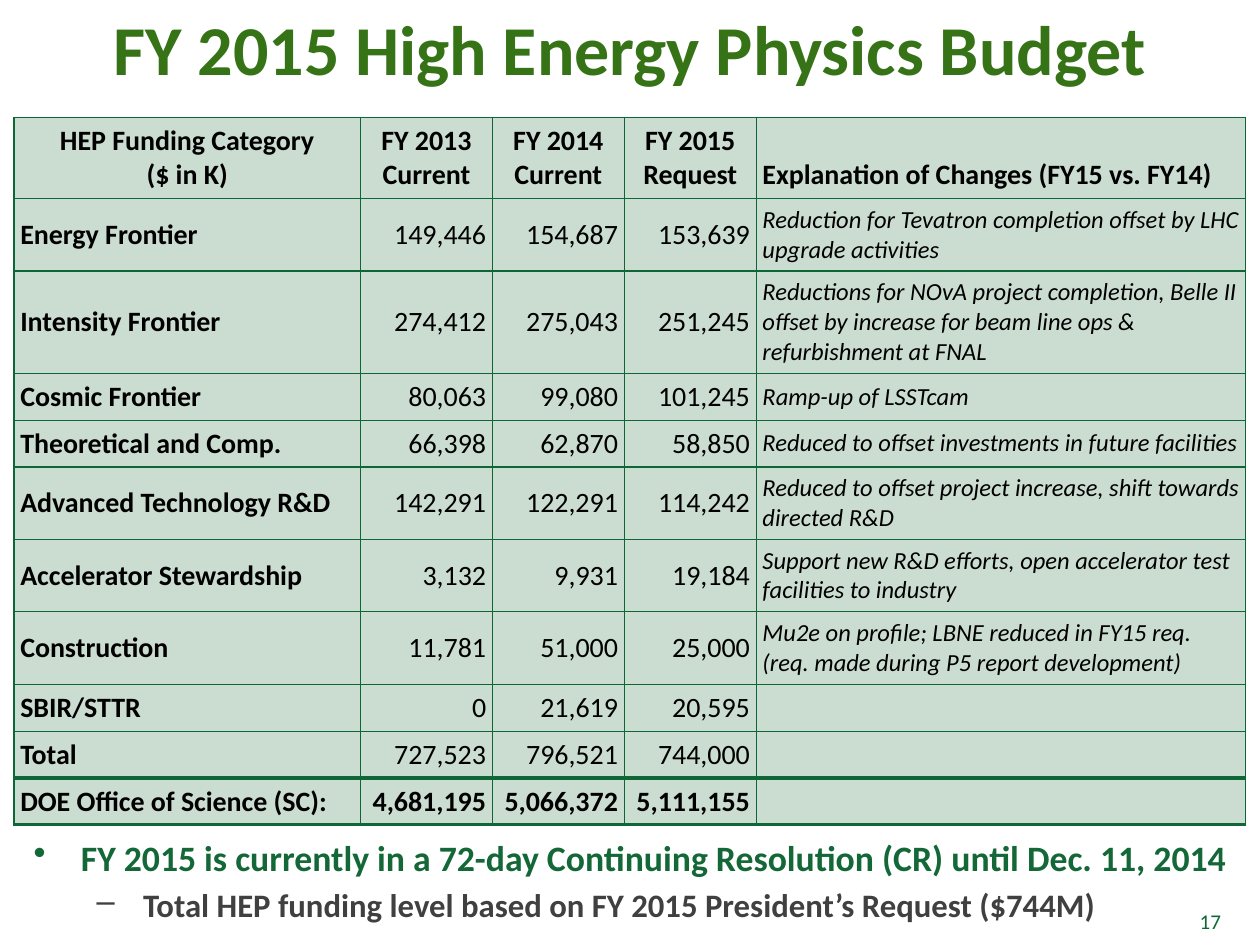
import copy

import pptx
import pptx.dml.color
import pptx.enum.text
import pptx.oxml
import pptx.oxml.ns
import pptx.util

Pt = pptx.util.Pt
ALIGN = pptx.enum.text.PP_ALIGN
ANCHOR = pptx.enum.text.MSO_ANCHOR
FONT = "Calibri"
GRID, RULE, CELL = "0D6635", "0F6636", "CBDCD1"
COLUMN_WIDTHS = [198, 75.4, 75.4, 75.4, 279.8]
ROW_HEIGHTS = [46.3, 41.4, 58.4, 26.8, 26.8, 41.4, 41.4, 41.4, 26.8, 26.8, 26.8]
BUDGET = [
    ["HEP Funding Category\v($ in K)", "FY 2013 Current", "FY 2014 Current", "FY 2015 Request",
     "Explanation of Changes (FY15 vs. FY14)"],
    ["Energy Frontier", "149,446", "154,687", "153,639",
     "Reduction for Tevatron completion offset by LHC upgrade activities"],
    ["Intensity Frontier", "274,412", "275,043", "251,245",
     "Reductions for NOvA project completion, Belle II offset by increase for beam line ops & "
     "refurbishment at FNAL"],
    ["Cosmic Frontier", "80,063", "99,080", "101,245", "Ramp-up of LSSTcam"],
    ["Theoretical and Comp.", "66,398", "62,870", "58,850",
     "Reduced to offset investments in future facilities"],
    ["Advanced Technology R&D", "142,291", "122,291", "114,242",
     "Reduced to offset project increase, shift towards directed R&D"],
    ["Accelerator Stewardship", "3,132", "9,931", "19,184",
     "Support new R&D efforts, open accelerator test facilities to industry"],
    ["Construction", "11,781", "51,000", "25,000",
     "Mu2e on profile; LBNE reduced in FY15 req. (req. made during P5 report development)"],
    ["SBIR/STTR", "0", "21,619", "20,595", ""],
    ["Total", "727,523", "796,521", "744,000", ""],
    ["DOE Office of Science (SC):", "4,681,195", "5,066,372", "5,111,155", ""],
]


def color(value):
    """Turn a hex string into a colour."""
    return pptx.dml.color.RGBColor.from_string(value)


def style_para(para, size, ink, bold=False, italic=False, align=ALIGN.LEFT):
    """Format every run and line break of a paragraph alike."""
    para.alignment = align
    for span in para.runs:
        span.font.name = FONT
        span.font.size = Pt(size)
        span.font.bold = bold
        span.font.italic = italic
        span.font.color.rgb = color(ink)
    for line_break in para._p.findall(pptx.oxml.ns.qn("a:br")):
        line_break.insert(0, copy.deepcopy(para.runs[0]._r.rPr))


def add_frame(page, left, top, width, height, anchor=ANCHOR.MIDDLE):
    """Add a wrapping text box and return its text frame."""
    frame = page.shapes.add_textbox(Pt(left), Pt(top), Pt(width), Pt(height)).text_frame
    frame.word_wrap = True
    frame.vertical_anchor = anchor
    return frame


def add_line(page, text, left, top, width, height, size, ink, bold, align):
    """Place a single line of text in a box."""
    para = add_frame(page, left, top, width, height).paragraphs[0]
    para.text = text
    style_para(para, size, ink, bold, align=align)


def set_borders(cell, last):
    """Draw the four cell borders, heavier above and below the last row."""
    properties = cell._tc.get_or_add_tcPr()
    for side in "LRTB":
        heavy = last and side in "TB"
        properties.append(pptx.oxml.parse_xml(
            f'<a:ln{side} {pptx.oxml.ns.nsdecls("a")} w="{Pt(2 if heavy else 0.75)}">'
            f'<a:solidFill><a:srgbClr val="{RULE if heavy else GRID}"/></a:solidFill></a:ln{side}>'))


def fill_cell(cell, text, row, column):
    """Write one budget cell, styled by its row and column."""
    header, last, note = row == 0, row == len(BUDGET) - 1, column == 4
    set_borders(cell, last)
    cell.fill.solid()
    cell.fill.fore_color.rgb = color(CELL)
    cell.margin_left = cell.margin_right = Pt(3.6)
    cell.margin_top = cell.margin_bottom = Pt(3.6 if text else 0)
    cell.vertical_anchor = ANCHOR.BOTTOM if header else ANCHOR.MIDDLE
    if note or (column == 0 and not header):
        align = ALIGN.LEFT
    else:
        align = ALIGN.CENTER if header else ALIGN.RIGHT
    para = cell.text_frame.paragraphs[0]
    para.text = text
    explained = note and not header
    style_para(para, 14 if explained else 16, "000000",
               bold=header or last or column == 0, italic=explained, align=align)


def add_budget_table(page, left, top):
    """Add the budget table with its top left corner at the given point."""
    table = page.shapes.add_table(len(BUDGET), len(COLUMN_WIDTHS), Pt(left), Pt(top),
                                  Pt(sum(COLUMN_WIDTHS)), Pt(sum(ROW_HEIGHTS))).table
    for column, width in zip(table.columns, COLUMN_WIDTHS):
        column.width = Pt(width)
    for row, height in zip(table.rows, ROW_HEIGHTS):
        row.height = Pt(height)
    for row, texts in enumerate(BUDGET):
        for column, text in enumerate(texts):
            fill_cell(table.cell(row, column), text, row, column)


def add_bullets(page, left, top, width, height):
    """Add the two-level remarks under the table."""
    remarks = [
        ("FY 2015 is currently in a 72-day Continuing Resolution (CR) until Dec. 11, 2014",
         "•", 0, 27, 27, 20.4, "146737"),
        ("Total HEP funding level based on FY 2015 President’s Request ($744M)",
         "–", 1, 62.5, 26.5, 18.7, "404040"),
    ]
    frame = add_frame(page, left, top, width, height, ANCHOR.TOP)
    for text, mark, level, margin, hang, size, ink in remarks:
        para = frame.add_paragraph() if level else frame.paragraphs[0]
        para.text = text
        para.level = level
        if level:
            para.space_before = Pt(3.7)
        properties = para._p.get_or_add_pPr()
        properties.set("marL", str(Pt(margin)))
        properties.set("indent", str(-Pt(hang)))
        properties.append(pptx.oxml.parse_xml(
            f'<a:buChar {pptx.oxml.ns.nsdecls("a")} char="{mark}"/>'))
        style_para(para, size, ink, bold=True)


def main():
    """Build the budget slide and save it."""
    deck = pptx.Presentation()
    deck.slide_width, deck.slide_height = Pt(720), Pt(540)
    page = deck.slides.add_slide(deck.slide_layouts[6])
    add_line(page, "17", 674.6, 512, 30.2, 28.8, 12, RULE, False, ALIGN.RIGHT)
    add_line(page, "FY 2015 High Energy Physics Budget", 0, 0, 720, 54, 40, "367317", True,
             ALIGN.CENTER)
    add_budget_table(page, 8, 67.2)
    add_bullets(page, 12.2, 473.8, 707.8, 66)
    deck.save("out.pptx")


if __name__ == "__main__":
    main()
